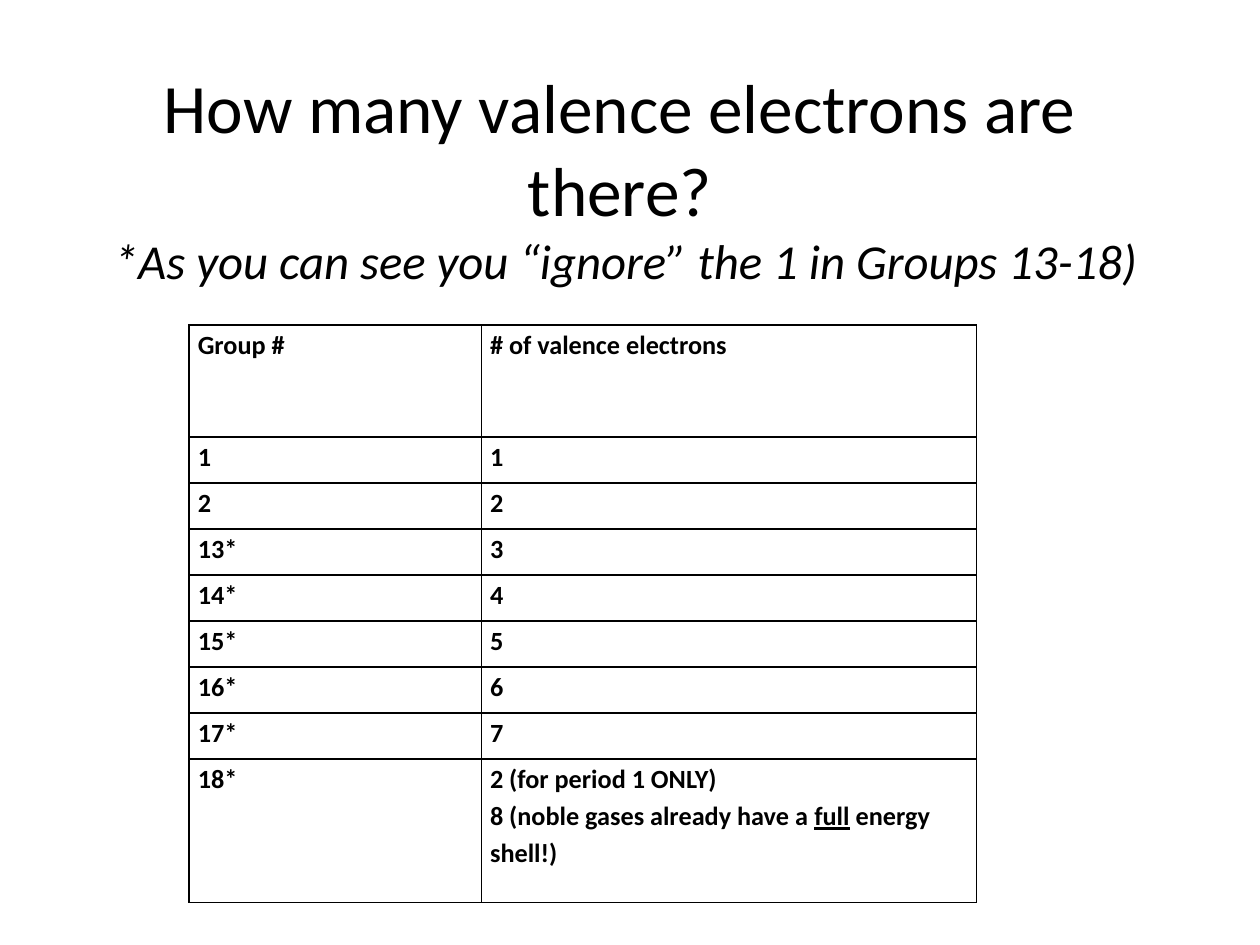
from dataclasses import dataclass

from lxml import etree
from pptx import Presentation
from pptx import util as u
from pptx.dml.color import RGBColor
from pptx.enum import text
from pptx.oxml.ns import qn


@dataclass(frozen=True)
class Theme:
    font: str = "Calibri"
    ink: str = "000000"
    title: float = 39.6
    subtitle: float = 27.9
    body: float = 15
    border: float = 1


THEME = Theme()
WIDTH, HEIGHT = 10, 7.5

HEADER = ["Group #", "# of valence electrons"]
GROUPS = ["1", "2"] + [f"{n}*" for n in range(13, 18)]
NOBLE = [
    ("2 (for period 1 ONLY)",),
    ("8 (noble gases already have a ", "full", " energy shell!)"),
]
COLUMNS = [2.32, 3.93]
ROWS = [0.89] + [0.365] * len(GROUPS) + [1.14]


def add_run(p, content, size, bold=False, italic=False, underline=False):
    r = p.add_run()
    r.text = content
    f = r.font
    f.name, f.size = THEME.font, u.Pt(size)
    f.bold, f.italic, f.underline = bold, italic, underline
    f.color.rgb = RGBColor.from_string(THEME.ink)


def add_title(slide, title, subtitle):
    sp = slide.shapes.add_textbox(
        u.Inches(0.042 * WIDTH), u.Inches(0.068 * HEIGHT),
        u.Inches(0.9 * WIDTH), u.Inches(0.31 * HEIGHT))
    tf = sp.text_frame
    tf.word_wrap = True
    tf.margin_top = 0
    tf.vertical_anchor = text.MSO_ANCHOR.TOP
    p = tf.paragraphs[0]
    p.alignment = text.PP_ALIGN.CENTER
    add_run(p, title, THEME.title)
    p.add_line_break()
    add_run(p, subtitle, THEME.subtitle, italic=True)


def set_borders(cell):
    props = cell._tc.get_or_add_tcPr()
    for i, side in enumerate(("lnL", "lnR", "lnT", "lnB")):
        line = etree.Element(qn(f"a:{side}"), w=str(u.Pt(THEME.border)))
        fill = etree.SubElement(line, qn("a:solidFill"))
        etree.SubElement(fill, qn("a:srgbClr"), val=THEME.ink)
        props.insert(i, line)  # borders come before the fill


def fill_cell(cell, paragraphs):
    """Each paragraph is a tuple of runs; every second run is underlined."""
    cell.fill.background()
    cell.margin_left = cell.margin_right = u.Inches(0.07)
    cell.margin_top = cell.margin_bottom = 0
    tf = cell.text_frame
    for i, runs in enumerate(paragraphs):
        p = tf.add_paragraph() if i else tf.paragraphs[0]
        p.line_spacing = 1.15
        for j, content in enumerate(runs):
            add_run(p, content, THEME.body, bold=True, underline=j % 2 == 1)
    set_borders(cell)


def add_grid(slide, rows):
    frame = slide.shapes.add_table(
        len(ROWS), len(COLUMNS), u.Inches(0.15 * WIDTH),
        u.Inches(0.344 * HEIGHT), u.Inches(sum(COLUMNS)), u.Inches(sum(ROWS)))
    table = frame.table
    table.first_row = table.horz_banding = False
    for column, width in zip(table.columns, COLUMNS):
        column.width = u.Inches(width)
    for row, height, contents in zip(table.rows, ROWS, rows):
        row.height = u.Inches(height)
        for cell, paragraphs in zip(row.cells, contents):
            fill_cell(cell, paragraphs)


def main():
    prs = Presentation()
    prs.slide_width, prs.slide_height = u.Inches(WIDTH), u.Inches(HEIGHT)
    slide = prs.slides.add_slide(prs.slide_layouts[6])

    # Heading
    add_title(slide, "How many valence electrons are there?",
              " *As you can see you “ignore” the 1 in Groups 13-18)")

    # Table: header, one row per group, then the noble gases
    rows = [[[(label,)] for label in HEADER]]
    rows += [[[(group,)], [(str(count),)]]
             for count, group in enumerate(GROUPS, start=1)]
    rows.append([[("18*",)], NOBLE])
    add_grid(slide, rows)

    prs.save("out.pptx")


if __name__ == "__main__":
    main()
